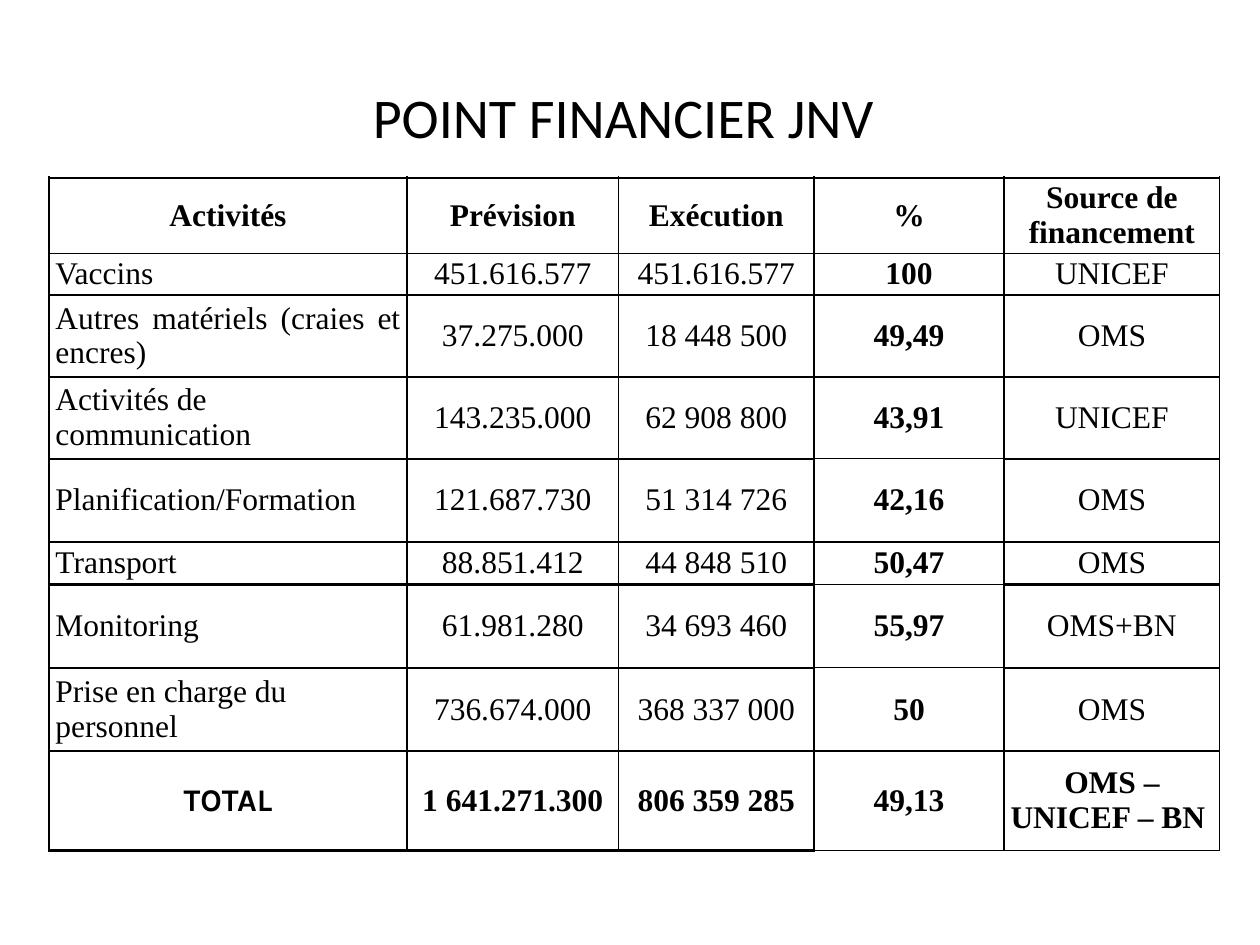
from lxml import etree
from pptx import Presentation
from pptx import util as u
from pptx.dml.color import RGBColor
from pptx.enum import text
from pptx.oxml.ns import qn

BLACK = "000000"
SERIF = "Times New Roman"
LEFT, CENTER, JUSTIFY = text.PP_ALIGN.LEFT, text.PP_ALIGN.CENTER, text.PP_ALIGN.JUSTIFY

COLUMN_WIDTHS = [2.84, 1.68, 1.55, 1.51, 1.71]
ROW_HEIGHTS = [0.57, 0.33, 0.65, 0.65, 0.66, 0.34, 0.66, 0.66, 0.79]
ROWS = [
    ["Activités", "Prévision", "Exécution", "%", "Source de financement"],
    ["Vaccins", "451.616.577", "451.616.577", "100", "UNICEF"],
    ["Autres matériels (craies et encres)", "37.275.000", "18 448 500", "49,49", "OMS"],
    ["Activités de communication", "143.235.000", "62 908 800", "43,91", "UNICEF"],
    ["Planification/Formation", "121.687.730", "51 314 726", "42,16", "OMS"],
    ["Transport", "88.851.412", "44 848 510", "50,47", "OMS"],
    ["Monitoring", "61.981.280", "34 693 460", "55,97", "OMS+BN"],
    ["Prise en charge du personnel", "736.674.000", "368 337 000", "50", "OMS"],
    ["TOTAL", "1 641.271.300", "806 359 285", "49,13", "OMS – UNICEF – BN "],
]
LAST_ROW = len(ROWS) - 1
PERCENT_COLUMN, SOURCE_COLUMN = 3, 4
LABEL_ALIGNMENTS = [CENTER, LEFT, JUSTIFY, LEFT, JUSTIFY, JUSTIFY, JUSTIFY, LEFT, CENTER]
SPACED_ROWS = (1, 5)


def color(value):
    return RGBColor.from_string(value)


def apply(target, formats):
    for name, value in formats.items():
        setattr(target, name, value)


def write(para, words, size, font, bold=False):
    span = para.add_run()
    span.text = words
    apply(span.font, {"size": u.Pt(size), "name": font, "bold": bold})
    span.font.color.rgb = color(BLACK)


def border_widths(row, column):
    percent = column == PERCENT_COLUMN
    final_source = row == LAST_ROW and column == SOURCE_COLUMN
    return {
        "a:lnL": 1.5 if column == 0 else 1,
        "a:lnR": 1,
        "a:lnT": 1.5 if row == 0 or (row >= 4 and not percent) else 1,
        "a:lnB": 1.5 if row >= 3 and not percent and not final_source else 1,
    }


def draw_borders(cell, widths):
    properties = cell._tc.get_or_add_tcPr()
    for tag, width in widths.items():
        line = etree.SubElement(properties, qn(tag), w=str(u.Pt(width)))
        fill = etree.SubElement(line, qn("a:solidFill"))
        etree.SubElement(fill, qn("a:srgbClr"), val=BLACK)


def add_title(page, left, top, width, height):
    box = page.shapes.add_textbox(left, top, width, height)
    apply(box.text_frame, {"word_wrap": True, "vertical_anchor": text.MSO_ANCHOR.MIDDLE})
    para = box.text_frame.paragraphs[0]
    para.alignment = CENTER
    write(para, "POINT FINANCIER JNV ", 32, "Calibri")


def fill_cell(cell, row, column, words):
    apply(cell, {
        "vertical_anchor": text.MSO_ANCHOR.MIDDLE,
        "margin_left": u.Inches(0.05),
        "margin_right": u.Inches(0.05),
        "margin_top": 0,
        "margin_bottom": 0,
    })
    para = cell.text_frame.paragraphs[0]
    para.alignment = LABEL_ALIGNMENTS[row] if column == 0 else CENTER
    if row in SPACED_ROWS:
        apply(para, {"space_before": u.Pt(6), "space_after": u.Pt(6)})
    font = "Karla" if row == LAST_ROW and column == 0 else SERIF
    write(para, words, 18, font, row in (0, LAST_ROW) or column == PERCENT_COLUMN)
    draw_borders(cell, border_widths(row, column))
    cell.fill.background()


def add_budget_table(page, left, top, width, height):
    frame = page.shapes.add_table(len(ROWS), len(COLUMN_WIDTHS), left, top, width, height)
    table = frame.table
    apply(table, {"first_row": False, "horz_banding": False})
    for column, size in zip(table.columns, COLUMN_WIDTHS):
        column.width = u.Inches(size)
    for row, size in zip(table.rows, ROW_HEIGHTS):
        row.height = u.Inches(size)
    for row, entries in enumerate(ROWS):
        for column, words in enumerate(entries):
            fill_cell(table.cell(row, column), row, column, words)


def main():
    deck = Presentation()
    apply(deck, {"slide_width": u.Inches(10), "slide_height": u.Inches(7.5)})
    page = deck.slides.add_slide(deck.slide_layouts[6])
    add_title(page, u.Inches(0.5), u.Inches(0.3), u.Inches(9), u.Inches(1.25))
    add_budget_table(page, u.Inches(0.39), u.Inches(1.41), u.Inches(9.3), u.Inches(5.34))
    deck.save("out.pptx")


if __name__ == "__main__":
    main()
